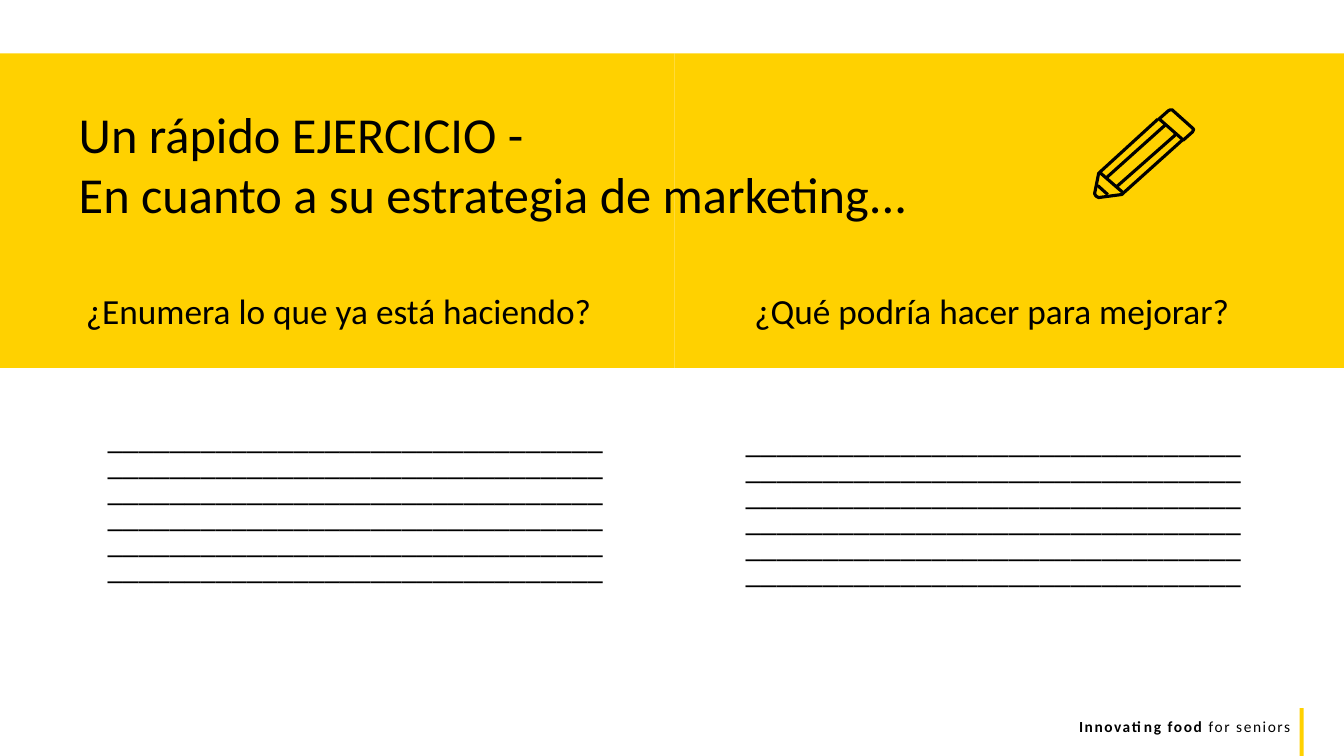
from pptx import Presentation
from pptx.dml.color import RGBColor
from pptx.enum.shapes import MSO_SHAPE
from pptx.enum.text import MSO_ANCHOR, MSO_AUTO_SIZE, PP_ALIGN
from pptx.oxml.ns import qn
from pptx.util import Pt

RECT = MSO_SHAPE.RECTANGLE
TOP = MSO_ANCHOR.TOP
NO_FIT = MSO_AUTO_SIZE.NONE
LEFT, CENTER, RIGHT = PP_ALIGN.LEFT, PP_ALIGN.CENTER, PP_ALIGN.RIGHT

YELLOW = RGBColor(0xFF, 0xD1, 0x00)
BLACK = RGBColor(0x00, 0x00, 0x00)

COMPARISON_LAYOUT = 4
PENCIL_UNIT = Pt(0.72)
PENCIL = [  # strokes in hundredths of an inch: (points, closed)
    # Eraser end
    ([(1183, 127), (1164, 110), (1163, 109), (1161, 109), (1159, 110), (1150, 118),
      (1174, 139), (1183, 131), (1184, 129), (1184, 128)], True),
    # Barrel and tip
    ([(1149, 118), (1091, 171), (1090, 172), (1086, 192), (1087, 194), (1088, 195),
      (1090, 196), (1113, 193), (1114, 192), (1173, 139)], False),
    # Barrel edges
    ([(1167, 133), (1108, 185)], False),
    ([(1098, 176), (1156, 124)], False),
    # Lead and cut
    ([(1099, 193), (1089, 184)], False),
    ([(1091, 171), (1114, 191)], False),
]


class SlideBuilder:
    font = "Calibri"

    def __init__(self, prs):
        self.slide = prs.slides.add_slide(prs.slide_layouts[COMPARISON_LAYOUT])
        self.shapes = self.slide.shapes

    def bar(self, x, y, w, h):
        sp = self.shapes.add_shape(RECT, Pt(x), Pt(y), Pt(w), Pt(h))
        sp.shadow.inherit = False
        sp.fill.solid()
        sp.fill.fore_color.rgb = YELLOW
        sp.line.fill.background()

    def run(self, p, text, size, bold=False):
        r = p.add_run()
        r.text = text
        r.font.name = self.font
        r.font.size = Pt(size)
        r.font.bold = bold
        r.font.color.rgb = BLACK
        return r

    def frame(self, sp, x, y, w, h):
        sp.left, sp.top, sp.width, sp.height = Pt(x), Pt(y), Pt(w), Pt(h)
        tf = sp.text_frame
        tf.word_wrap = True
        tf.auto_size = NO_FIT
        tf.vertical_anchor = TOP
        return tf

    def placeholder(self, idx, box, lines, size, align, spacing=1.0, indent=0):
        sp = self.slide.placeholders[idx]
        self.shapes._spTree.append(sp._element)  # bring in front of the band
        tf = self.frame(sp, *box)
        for i, text in enumerate(lines):
            p = tf.add_paragraph() if i else tf.paragraphs[0]
            pPr = p._p.get_or_add_pPr()
            pPr.set("marL", str(Pt(indent)))
            pPr.set("indent", "0")
            pPr.append(pPr.makeelement(qn("a:buNone"), {}))
            p.alignment = align
            p.line_spacing = spacing
            p.space_before = Pt(0)
            self.run(p, text, size)

    def footer(self, box, parts, size, tracking):
        tf = self.frame(self.shapes.add_textbox(0, 0, 0, 0), *box)
        p = tf.paragraphs[0]
        p.alignment = RIGHT
        for text, bold in parts:
            r = self.run(p, text, size, bold)
            r._r.get_or_add_rPr().set("spc", str(round(tracking * 100)))

    def drawing(self, strokes, unit, weight):
        group = self.shapes.add_group_shape()
        for points, closed in strokes:
            fb = group.shapes.build_freeform(*points[0], scale=unit)
            fb.add_line_segments(points[1:], close=closed)
            sp = fb.convert_to_shape()
            sp.shadow.inherit = False
            sp.fill.background()
            sp.line.color.rgb = BLACK
            sp.line.width = Pt(weight)


def main():
    prs = Presentation()
    prs.slide_width, prs.slide_height = Pt(960), Pt(540)
    s = SlideBuilder(prs)

    # Yellow band in two halves
    for x in (0, 481.7):
        s.bar(x, 38.2, 481.7, 224.6)

    # Footer
    s.bar(928.4, 505.8, 2.9, 34.2)
    s.footer((28.8, 509, 900, 20.9),
             [("Innovating food ", True), ("for seniors", False)], 11, 1.1)

    # Title and pencil
    s.placeholder(0, (49, 69.8, 622.8, 94.3),
                  ["Un rápido EJERCICIO -\u00a0".replace("\u00a0", " "),
                   "En cuanto a su estrategia de marketing..."], 36, LEFT)
    s.drawing(PENCIL, PENCIL_UNIT, 2.25)

    # Questions, each with six lines of 32 underscores to write on
    writing_lines = "_" * (6 * 32)
    columns = [
        (1, "¿Enumera lo que ya está haciendo? ", 49.7, 49.7, 302.4),
        (3, "¿Qué podría hacer para mejorar?", 513.4, 505.4, 305.3),
    ]
    for idx, question, question_x, lines_x, lines_y in columns:
        s.placeholder(idx, (question_x, 211, 390.2, 46.1), [question],
                      25.2, CENTER, spacing=0.7)
        s.placeholder(idx + 1, (lines_x, lines_y, 390.2, 132.5), [writing_lines],
                      22.2, CENTER, spacing=0.7, indent=18)

    prs.save("out.pptx")


if __name__ == "__main__":
    main()
